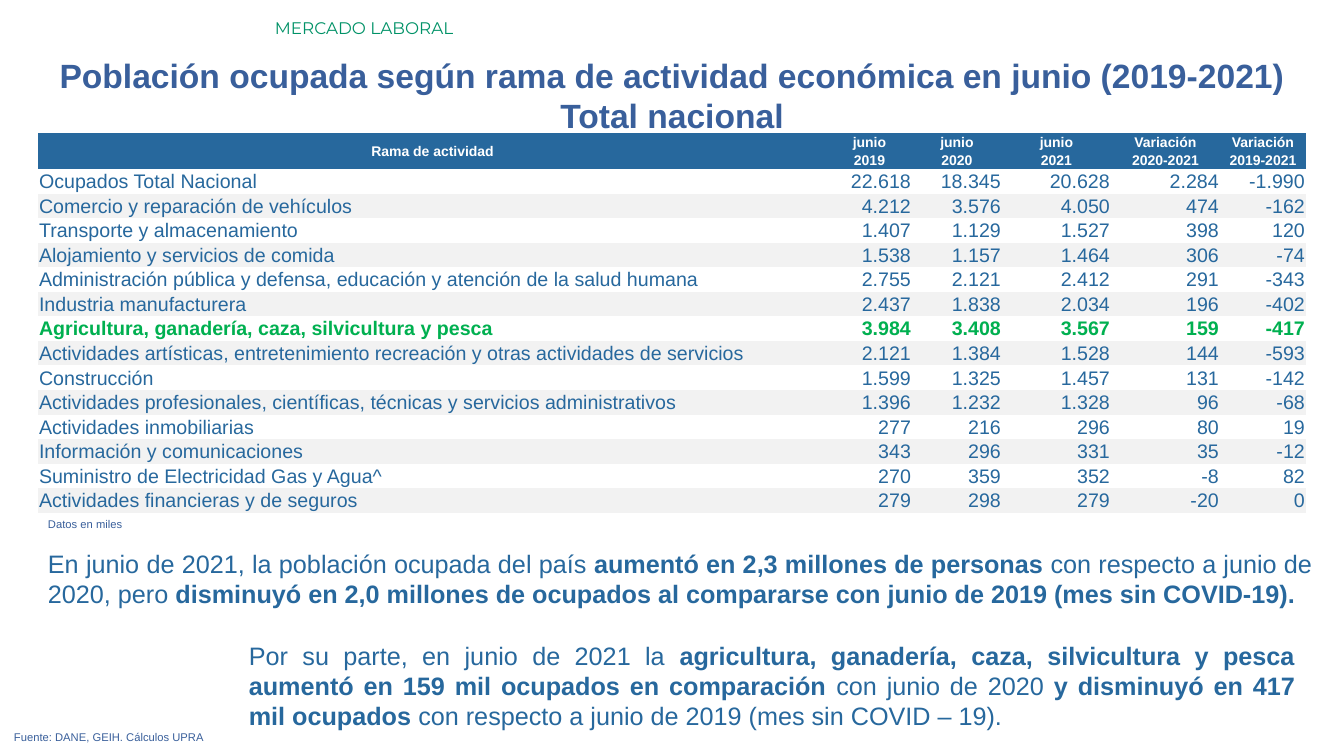
from pptx import Presentation
from pptx import util as u
from pptx.dml.color import RGBColor
from pptx.enum import text

PX = 914400 / 100.8
HUES = {"label": "009267", "title": "395F9B", "blue": "27689D",
        "green": "00B050", "band": "F2F2F2", "white": "FFFFFF"}
LEFT, MID, RIGHT, JUST = (text.PP_ALIGN.LEFT, text.PP_ALIGN.CENTER,
                          text.PP_ALIGN.RIGHT, text.PP_ALIGN.JUSTIFY)
NO_STYLE = "{2D5ABB26-0587-4C30-8999-92F81FD0307C}"


def px(n):
    return u.Emu(round(n * PX))


class Page:
    def __init__(self, deck, face="Arial"):
        self.slide = deck.slides.add_slide(deck.slide_layouts[6])
        self.face = face

    def style(self, para, size, hue, align, bold=None, face=None):
        para.alignment = align
        font = para.font
        font.name, font.size, font.bold = face or self.face, u.Pt(size), bold
        font.color.rgb = RGBColor.from_string(HUES[hue])

    def text(self, box, paras, size, hue, align, bold=None, face=None):
        """Each paragraph is a list of runs; every second run is bold."""
        frame = self.slide.shapes.add_textbox(*map(px, box)).text_frame
        frame.word_wrap = True
        frame.auto_size = text.MSO_AUTO_SIZE.SHAPE_TO_FIT_TEXT
        for i, runs in enumerate(paras):
            para = frame.add_paragraph() if i else frame.paragraphs[0]
            self.style(para, size, hue, align, bold, face)
            for j, words in enumerate(runs):
                run = para.add_run()
                run.text = words
                if len(runs) > 1:
                    run.font.bold = j % 2 == 1

    def cell(self, cell, words, size, hue, align, bold, fill):
        cell.margin_left = cell.margin_right = cell.margin_top = px(1)
        cell.margin_bottom = 0
        cell.vertical_anchor = text.MSO_ANCHOR.MIDDLE
        if fill:
            cell.fill.solid()
            cell.fill.fore_color.rgb = RGBColor.from_string(HUES[fill])
        else:
            cell.fill.background()
        para = cell.text_frame.paragraphs[0]
        para.text = words
        self.style(para, size, hue, align, bold)

    def table(self, box, widths, head, body, key, top):
        rows = head + body
        grid = self.slide.shapes.add_table(
            len(rows), len(widths), *map(px, box)).table
        grid.first_row = grid.horz_banding = False
        grid._tbl.tblPr[0].text = NO_STYLE
        for col, width in zip(grid.columns, widths):
            col.width = px(width)
        rest = (box[3] - top * len(head)) / len(body)
        for r, row in enumerate(rows):
            n = r - len(head)
            grid.rows[r].height = px(top if n < 0 else rest)
            for c, words in enumerate(row):
                if n < 0:
                    look = 10, "white", MID, True, "blue"
                else:
                    main = row[0] == key
                    look = (14, "green" if main else "blue", RIGHT if c else LEFT,
                            main, "band" if n % 2 else None)
                self.cell(grid.cell(r, c), words, *look)
        grid.cell(0, 0).merge(grid.cell(len(head) - 1, 0))


HEAD = [["Rama de actividad", "junio", "junio", "junio", "Variación", "Variación"],
        ["", "2019", "2020", "2021", "2020-2021", "2019-2021"]]
FARM = "Agricultura, ganadería, caza, silvicultura y pesca"
BODY = [
    ["Ocupados Total Nacional", "22.618", "18.345", "20.628", "2.284", "-1.990"],
    ["Comercio y reparación de vehículos", "4.212", "3.576", "4.050", "474", "-162"],
    ["Transporte y almacenamiento", "1.407", "1.129", "1.527", "398", "120"],
    ["Alojamiento y servicios de comida", "1.538", "1.157", "1.464", "306", "-74"],
    ["Administración pública y defensa, educación y atención de la salud humana",
     "2.755", "2.121", "2.412", "291", "-343"],
    ["Industria manufacturera", "2.437", "1.838", "2.034", "196", "-402"],
    [FARM, "3.984", "3.408", "3.567", "159", "-417"],
    ["Actividades artísticas, entretenimiento recreación y otras actividades de servicios",
     "2.121", "1.384", "1.528", "144", "-593"],
    ["Construcción", "1.599", "1.325", "1.457", "131", "-142"],
    ["Actividades profesionales, científicas, técnicas y servicios administrativos",
     "1.396", "1.232", "1.328", "96", "-68"],
    ["Actividades inmobiliarias", "277", "216", "296", "80", "19"],
    ["Información y comunicaciones", "343", "296", "331", "35", "-12"],
    ["Suministro de Electricidad Gas y Agua^", "270", "359", "352", "-8", "82"],
    ["Actividades financieras y de seguros", "279", "298", "279", "-20", "0"],
]


def main():
    deck = Presentation()
    deck.slide_width, deck.slide_height = px(1344), px(756)
    page = Page(deck)

    # Heading
    page.text((265, 13, 1079, 30), [["MERCADO LABORAL"]], 12, "label", LEFT,
              face="Montserrat")
    page.text((0, 50, 1344, 92),
              [["Población ocupada según rama de actividad económica en junio (2019-2021)"],
               ["Total nacional"]], 24, "title", MID, bold=True)

    # National finding
    page.text((38, 543, 1284, 72), [[
        "En junio de 2021, la población ocupada del país ",
        "aumentó en 2,3 millones de personas ",
        "con respecto a junio de 2020, pero ",
        "disminuyó en 2,0 millones de ocupados al compararse con junio de 2019 "
        "(mes sin COVID-19)."]], 18, "blue", JUST)

    # Source and unit
    page.text((4, 725, 1301, 24), [["Fuente: DANE, GEIH. Cálculos UPRA"]],
              8, "title", JUST)
    page.text((38, 512, 1301, 24), [["Datos en miles"]], 8, "title", JUST)

    # Employment by branch
    page.table((38, 133, 1268, 380), (789, 85, 90, 109, 109, 86),
               HEAD, BODY, FARM, top=18)

    # Farming finding
    page.text((239, 635, 1066, 102), [[
        "Por su parte, en junio de 2021 la",
        " agricultura, ganadería, caza, silvicultura y pesca aumentó en 159 mil "
        "ocupados en comparación ",
        "con junio de 2020",
        " y disminuyó en 417 mil ocupados ",
        "con respecto a junio de 2019 (mes sin COVID – 19)."]], 18, "blue", JUST)

    deck.save("out.pptx")


if __name__ == "__main__":
    main()
